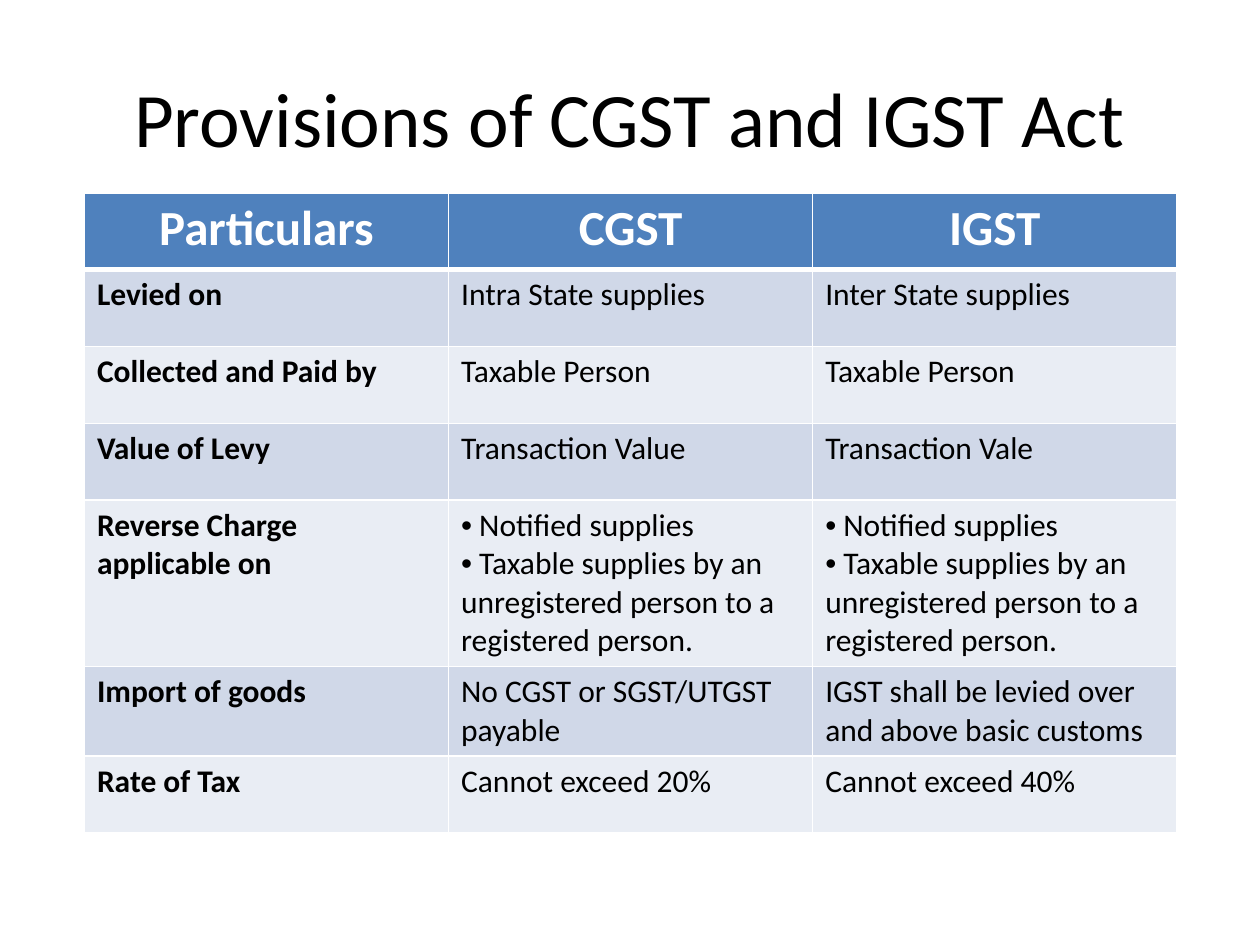
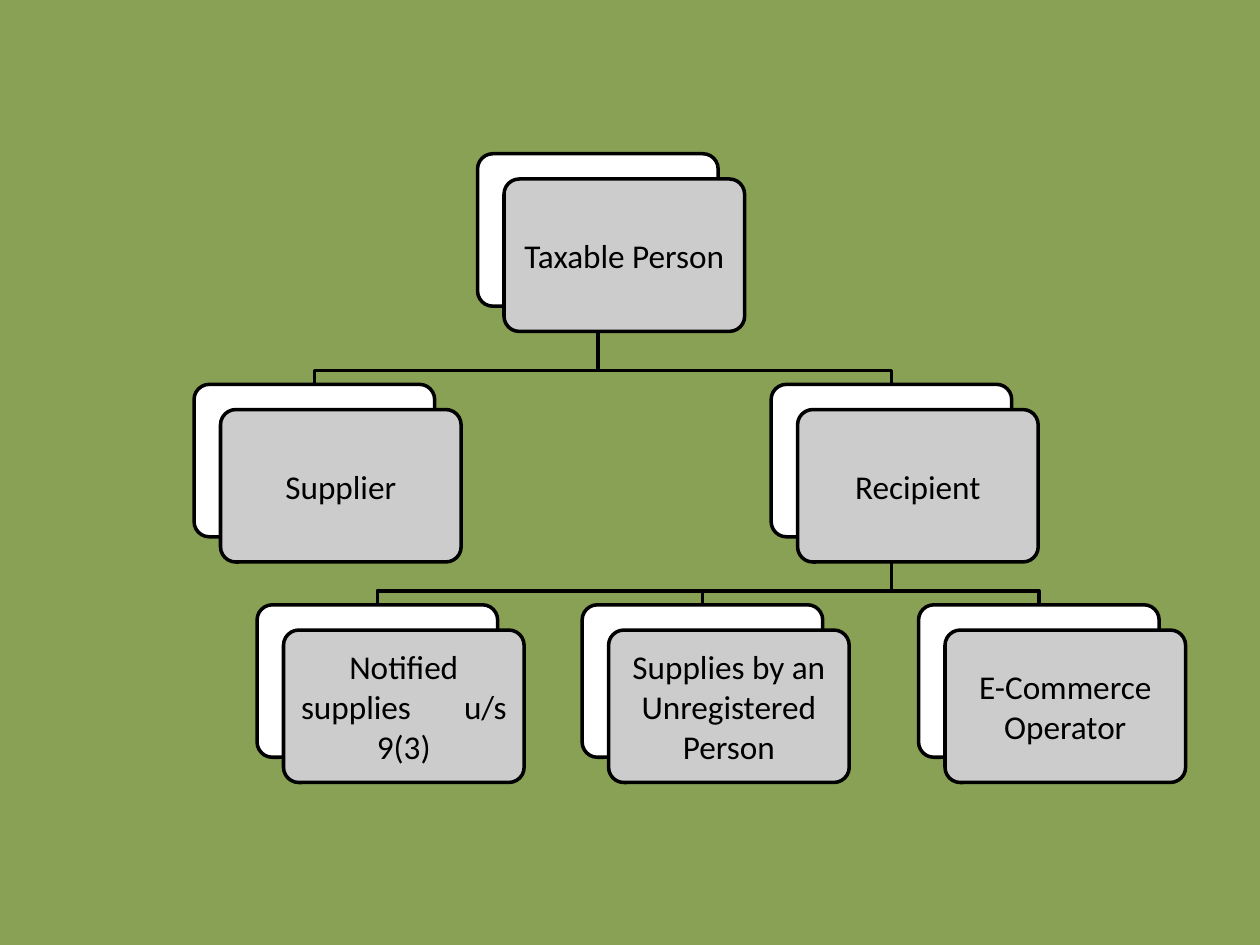
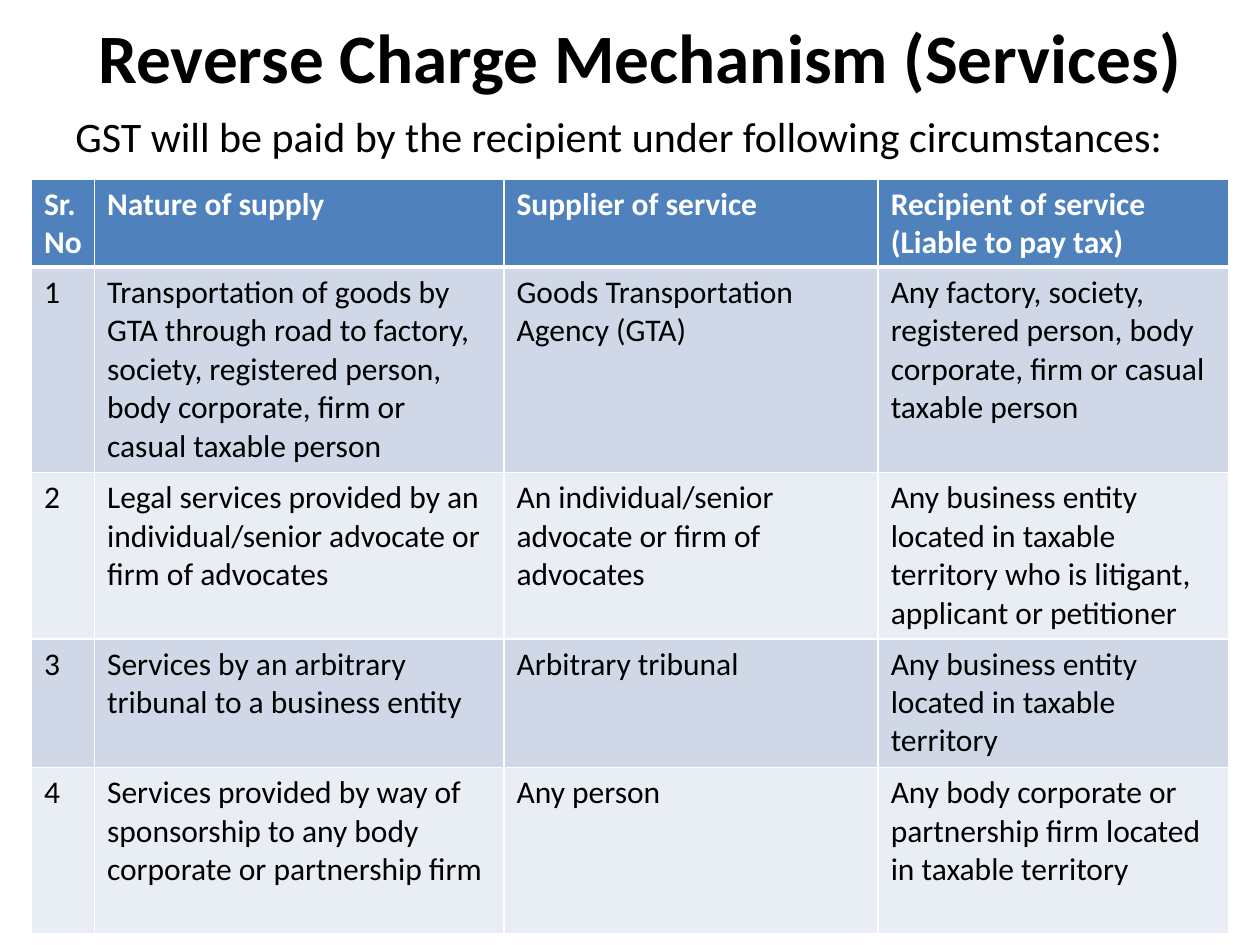
import pptx
import pptx.dml.color
import pptx.enum.shapes
import pptx.enum.text
import pptx.oxml.ns
import pptx.util
from lxml import etree

FONT = "Calibri"
COLOURS = {
    "text": "000000", "paper": "FFFFFF", "header": "4F81BD",
    "band_odd": "D0D8E8", "band_even": "E9EDF4",
    "tree_background": "89A155", "card": "CCCCCC",
}
TITLE_ONLY, BLANK = 5, 6

prs = pptx.Presentation()
prs.slide_width = pptx.util.Inches(10)
prs.slide_height = pptx.util.Inches(7.5)


def across(percent):
    return round(prs.slide_width * percent / 100)


def down(percent):
    return round(prs.slide_height * percent / 100)


def place(left, top, width, height):
    """Turn percentages of the slide into lengths."""
    return across(left), down(top), across(width), down(height)


def colour(name):
    return pptx.dml.color.RGBColor.from_string(COLOURS[name])


def paint(target, name):
    target.fill.solid()
    target.fill.fore_color.rgb = colour(name)


def style(paragraph, size, ink="text", bold=False, centred=False):
    align = pptx.enum.text.PP_ALIGN
    paragraph.alignment = align.CENTER if centred else align.LEFT
    font = paragraph.font
    font.name, font.size, font.bold = FONT, pptx.util.Pt(size), bold
    font.color.rgb = colour(ink)


def add_element(parent, tag, **attributes):
    return etree.SubElement(parent, pptx.oxml.ns.qn(tag), attributes)


# Titles
def add_title(slide, words, box, size, bold=False, line_spacing=None):
    title = slide.shapes.title
    title.left, title.top, title.width, title.height = place(*box)
    frame = title.text_frame
    frame.text = words
    frame.auto_size = pptx.enum.text.MSO_AUTO_SIZE.NONE
    frame.vertical_anchor = pptx.enum.text.MSO_ANCHOR.MIDDLE
    style(frame.paragraphs[0], size, bold=bold, centred=True)
    frame.paragraphs[0].line_spacing = line_spacing


# Tables
def border_cell(cell, row):
    """White rules of 1 pt, and 3 pt below the header."""
    properties = cell._tc.get_or_add_tcPr()
    heavy = {0: "a:lnB", 1: "a:lnT"}.get(row)
    for side in ("a:lnL", "a:lnR", "a:lnT", "a:lnB"):
        width = pptx.util.Pt(3 if side == heavy else 1)
        rule = add_element(properties, side, w=str(width))
        add_element(add_element(rule, "a:solidFill"), "a:srgbClr", val=COLOURS["paper"])


def write_cell(cell, words, size, **look):
    """Write one paragraph a line; a leading bullet sign makes a bullet."""
    lines = words.split("\n")
    cell.text = "\n".join(line.removeprefix("•") for line in lines)
    for line, paragraph in zip(lines, cell.text_frame.paragraphs):
        if line.startswith("•"):
            properties = paragraph._p.get_or_add_pPr()
            add_element(properties, "a:buFont", typeface="Arial")
            add_element(properties, "a:buChar", char="•")
        style(paragraph, size, **look)


def add_banded_table(slide, rows, box, column_shares, row_shares,
                     header_size=18, header_centred=False, bold_first=False):
    left, top, width, height = place(*box)
    table = slide.shapes.add_table(len(rows), len(rows[0]), left, top, width, height).table
    for column, share in zip(table.columns, column_shares):
        column.width = round(width * share / sum(column_shares))
    for row, share in zip(table.rows, row_shares):
        row.height = round(height * share / sum(row_shares))
    for r, row in enumerate(rows):
        for c, words in enumerate(row):
            cell = table.cell(r, c)
            border_cell(cell, r)
            if r == 0:
                paint(cell, "header")
                write_cell(cell, words, header_size, ink="paper", bold=True,
                           centred=header_centred)
            else:
                paint(cell, "band_odd" if r % 2 else "band_even")
                write_cell(cell, words, 18, bold=bold_first and c == 0)


# Tree of taxable persons
LEVEL_TOPS = (16.27, 40.67, 64)
CARD_WIDTH, CARD_HEIGHT = 19.1, 16.13
SHIFT_X, SHIFT_Y = 2.1, 2.67
BEND_ABOVE_CHILD = 1.47
GAP = "\t"  # marks a wide gap between two words of a label
PEOPLE = {  # label: (level, left, parent)
    "Taxable Person": (0, 37.9, None),
    "Supplier": (1, 15.4, "Taxable Person"),
    "Recipient": (1, 61.2, "Taxable Person"),
    f"Notified supplies{GAP}u/s 9(3)": (2, 20.4, "Recipient"),
    "Supplies by an Unregistered Person": (2, 46.2, "Recipient"),
    "E-Commerce Operator": (2, 72.9, "Recipient"),
}


def outline(shape):
    shape.shadow.inherit = False
    shape.line.color.rgb = colour("text")
    shape.line.width = pptx.util.Pt(2)


def add_branch(slide, parent, child):
    parent_level, parent_left, _ = parent
    child_level, child_left, _ = child
    parent_x = across(parent_left + CARD_WIDTH / 2)
    child_x = across(child_left + CARD_WIDTH / 2)
    child_top = LEVEL_TOPS[child_level]
    bend = down(child_top - BEND_ABOVE_CHILD)
    pen = slide.shapes.build_freeform(
        parent_x, down(LEVEL_TOPS[parent_level] + CARD_HEIGHT))
    pen.add_line_segments(
        [(parent_x, bend), (child_x, bend), (child_x, down(child_top))], close=False)
    branch = pen.convert_to_shape()
    branch.fill.background()
    outline(branch)


def add_card(slide, left, top, fill):
    card = slide.shapes.add_shape(
        pptx.enum.shapes.MSO_SHAPE.ROUNDED_RECTANGLE,
        *place(left, top, CARD_WIDTH, CARD_HEIGHT))
    card.adjustments[0] = 0.1
    paint(card, fill)
    outline(card)
    return card


def add_person(slide, label, level, left):
    top = LEVEL_TOPS[level]
    add_card(slide, left, top, "paper")
    frame = add_card(slide, left + SHIFT_X, top + SHIFT_Y, "card").text_frame
    frame.word_wrap = True
    frame.vertical_anchor = pptx.enum.text.MSO_ANCHOR.MIDDLE
    frame.margin_left = frame.margin_right = pptx.util.Inches(0.05)
    frame.margin_top = frame.margin_bottom = pptx.util.Inches(0.05)
    paragraph = frame.paragraphs[0]
    style(paragraph, 19, centred=True)
    before, gap, after = label.partition(GAP)
    paragraph.add_run().text = before
    if gap:
        wide_space = paragraph.add_run()
        wide_space.text = " "
        wide_space._r.get_or_add_rPr().set("spc", "2600")
        paragraph.add_run().text = after


# Slides
def build_provisions():
    slide = prs.slides.add_slide(prs.slide_layouts[TITLE_ONLY])
    add_title(slide, "Provisions of CGST and IGST Act", (5, 4, 90, 16.67), 44)
    reverse_charge = ("• Notified supplies\n• Taxable supplies by an "
                      "unregistered person to a registered person.")
    rows = [
        ("Particulars", "CGST", "IGST"),
        ("Levied on", "Intra State supplies", "Inter State supplies"),
        ("Collected and Paid by", "Taxable Person", "Taxable Person"),
        ("Value of Levy", "Transaction Value", "Transaction Vale"),
        ("Reverse Charge applicable on", reverse_charge, reverse_charge),
        ("Import of goods", "No CGST or SGST/UTGST payable",
         "IGST shall be levied over and above basic customs"),
        ("Rate of Tax", "Cannot exceed 20%", "Cannot exceed 40%"),
    ]
    add_banded_table(slide, rows, (6.7, 20.4, 86.7, 67.73), (1, 1, 1),
                     (61, 61, 61, 61, 132, 71, 61),
                     header_size=28, header_centred=True, bold_first=True)


def build_taxable_persons():
    slide = prs.slides.add_slide(prs.slide_layouts[BLANK])
    paint(slide.background, "tree_background")
    for person in PEOPLE.values():
        if person[2]:
            add_branch(slide, PEOPLE[person[2]], person)
    for label, (level, left, _) in PEOPLE.items():
        add_person(slide, label, level, left)


def build_reverse_charge():
    slide = prs.slides.add_slide(prs.slide_layouts[TITLE_ONLY])
    add_title(slide, "Reverse Charge Mechanism (Services)", (5.8, 2.27, 90, 8.93),
              39.6, bold=True, line_spacing=0.8)
    lead = slide.shapes.add_textbox(*place(5, 11.07, 90, 7.33)).text_frame
    lead.word_wrap = True
    lead.text = "GST will be paid by the recipient under following circumstances:"
    style(lead.paragraphs[0], 24)
    lead.paragraphs[0].space_before = pptx.util.Pt(4.8)
    rows = [
        ("Sr. No", "Nature of supply", "Supplier of service",
         "Recipient of service\n(Liable to pay tax)"),
        ("1", "Transportation of goods by GTA through road to factory, society, "
              "registered person, body corporate, firm or casual taxable person",
         "Goods Transportation Agency (GTA)",
         "Any factory, society, registered person, body corporate, "
         "firm or casual taxable person"),
        ("2", "Legal services provided by an individual/senior advocate "
              "or firm of advocates",
         "An individual/senior advocate or firm of advocates",
         "Any business entity located in taxable territory who is litigant, "
         "applicant or petitioner"),
        ("3", "Services by an arbitrary tribunal to a business entity",
         "Arbitrary tribunal", "Any business entity located in taxable territory"),
        ("4", "Services provided by way of sponsorship to any body corporate "
              "or partnership firm",
         "Any person",
         "Any body corporate or partnership firm located in taxable territory"),
    ]
    add_banded_table(slide, rows, (2.5, 18.93, 95, 79.87), (5, 32.5, 29.7, 27.8),
                     (70, 163, 132, 102, 132))


def main():
    build_provisions()
    build_taxable_persons()
    build_reverse_charge()
    prs.save("out.pptx")


if __name__ == "__main__":
    main()
